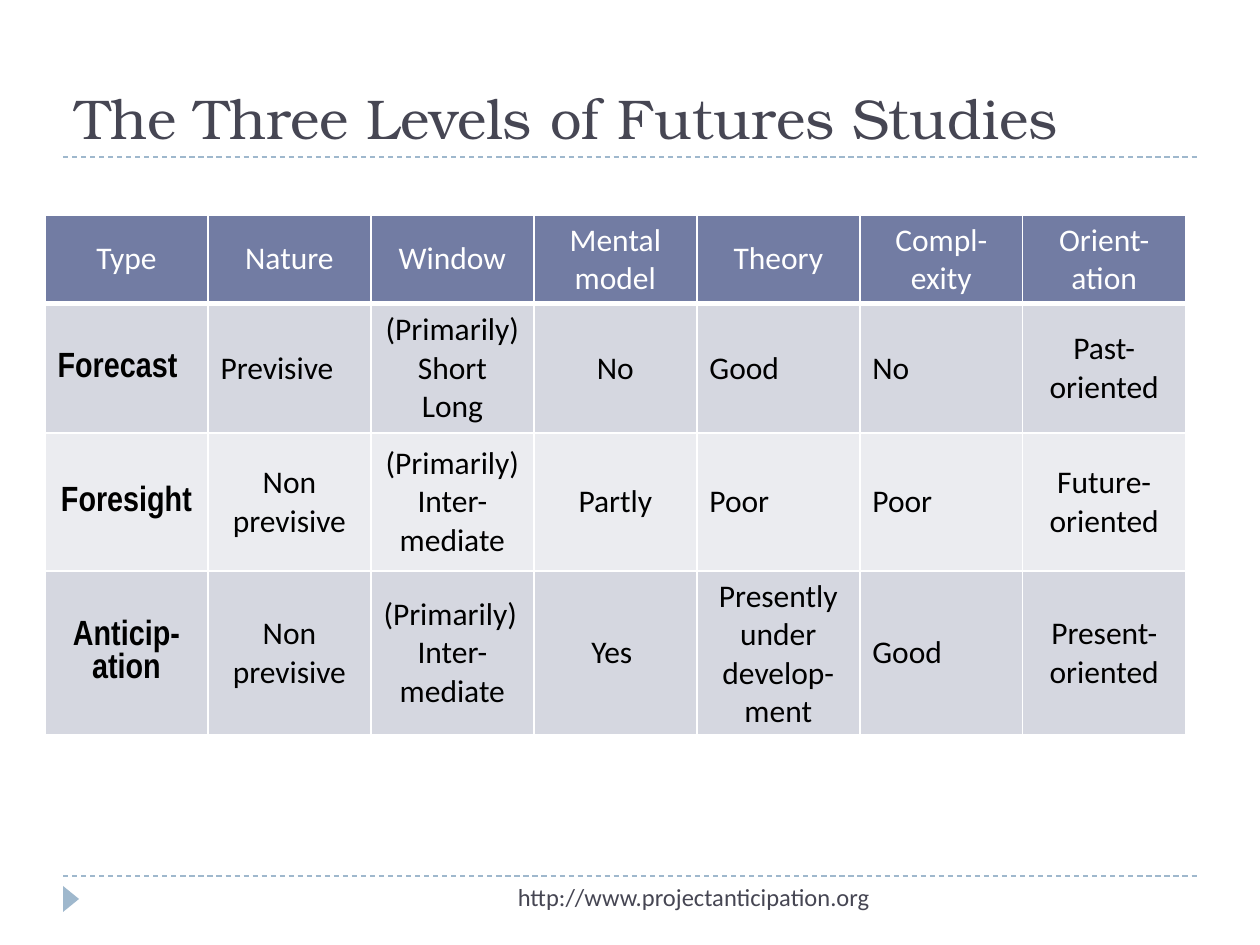
from lxml import etree
from pptx import Presentation
from pptx.dml.color import RGBColor
from pptx.enum.dml import MSO_LINE
from pptx.enum.shapes import MSO_CONNECTOR, MSO_SHAPE
from pptx.enum.text import MSO_ANCHOR, MSO_AUTO_SIZE, PP_ALIGN
from pptx.oxml.ns import qn
from pptx.util import Pt

LEFT, MID, RIGHT = PP_ALIGN.LEFT, PP_ALIGN.CENTER, PP_ALIGN.RIGHT
LOW, CENTER = MSO_ANCHOR.BOTTOM, MSO_ANCHOR.MIDDLE
DASH, STRAIGHT = MSO_LINE.DASH, MSO_CONNECTOR.STRAIGHT
FIXED, ARROW = MSO_AUTO_SIZE.NONE, MSO_SHAPE.ISOSCELES_TRIANGLE
TITLE_ONLY = 5

INK, ACCENT, WHITE, BLACK = "464653", "9FB8CD", "FFFFFF", "000000"
HEAD, BANDS = "727CA3", ("D5D7E0", "EBECF0")

# A leading "<" marks a paragraph set to the left
ROWS = [
    ["Type", "Nature", "Window", "Mental model", "Theory", "Compl-exity",
     "Orient-ation"],
    ["<Forecast", "<Previsive", "(Primarily) Short\nLong", "No", "<Good",
     "<No", "Past-oriented"],
    ["Foresight", "Non previsive", "(Primarily)\vInter-mediate", "Partly",
     "<Poor", "<Poor", "Future-oriented"],
    ["Anticip-ation", "Non previsive", "<(Primarily)\nInter-mediate", "Yes ",
     "Presently under develop-ment", "<Good", "Present-oriented"],
]
HEIGHTS = [77, 130, 138, 156]
COL = 163


def px(n):
    return round(n * 914400 / 126)


def color(code):
    return RGBColor.from_string(code)


def write(frame, text, size=18, font="Calibri", ink=BLACK, bold=False,
          align=LEFT):
    """Fill a text frame, one paragraph for each line of text."""
    frame.word_wrap = True
    for i, line in enumerate(text.split("\n")):
        para = frame.add_paragraph() if i else frame.paragraphs[0]
        para.text = line.removeprefix("<")
        para.alignment = LEFT if line.startswith("<") else align
        for run in para.runs:
            run.font.size = Pt(size)
            run.font.name = font
            run.font.bold = bold
            run.font.color.rgb = color(ink)


def edge(cell, base=1):
    """Draw white borders round a cell; base is the bottom width."""
    props = cell._tc.get_or_add_tcPr()
    for i, side in enumerate("LRTB"):
        width = Pt(base if side == "B" else 1)
        line = etree.Element(qn("a:ln" + side), w=str(width))
        fill = etree.SubElement(line, qn("a:solidFill"))
        etree.SubElement(fill, qn("a:srgbClr"), val=WHITE)
        props.insert(i, line)


class Deck:
    def __init__(self, wide, high):
        self.file = Presentation()
        self.file.slide_width, self.file.slide_height = px(wide), px(high)
        layout = self.file.slide_layouts[TITLE_ONLY]
        self.slide = self.file.slides.add_slide(layout)
        self.shapes = self.slide.shapes

    def title(self, text, x, y, w, h):
        box = self.shapes.title
        box.left, box.top, box.width, box.height = map(px, (x, y, w, h))
        frame = box.text_frame
        frame.auto_size, frame.vertical_anchor = FIXED, LOW
        write(frame, text, size=32, font="TeX Gyre Bonum", ink=INK)

    def label(self, text, x, y, w, h, **form):
        box = self.shapes.add_textbox(*map(px, (x, y, w, h)))
        write(box.text_frame, text, **form)

    def rule(self, x, y, end):
        line = self.shapes.add_connector(STRAIGHT, *map(px, (x, y, end, y)))
        line.line.color.rgb = color(ACCENT)
        line.line.width = Pt(0.75)
        line.line.dash_style = DASH
        etree.SubElement(line._element.spPr, qn("a:effectLst"))

    def arrow(self, x, y, w, h):
        mark = self.shapes.add_shape(ARROW, *map(px, (x, y, w, h)))
        mark.rotation = 90
        mark.shadow.inherit = False
        mark.fill.solid()
        mark.fill.fore_color.rgb = color(ACCENT)
        mark.line.fill.background()

    def table(self, x, y):
        count = len(ROWS[0])
        size = map(px, (x, y, COL * count, sum(HEIGHTS)))
        grid = self.shapes.add_table(len(ROWS), count, *size).table
        for col in grid.columns:
            col.width = px(COL)
        for r, texts in enumerate(ROWS):
            grid.rows[r].height = px(HEIGHTS[r])
            for c, text in enumerate(texts):
                cell = grid.cell(r, c)
                cell.vertical_anchor = CENTER
                cell.fill.solid()
                shade = BANDS[(r - 1) % 2] if r else HEAD
                cell.fill.fore_color.rgb = color(shade)
                edge(cell, base=1 if r else 3)
                form = {"align": MID, "ink": BLACK if r else WHITE}
                if r and c == 0:
                    form.update(size=20, font="Arial Narrow", bold=True)
                write(cell.text_frame, text, **form)


def main():
    deck = Deck(1260, 945)

    # Frame lines and corner arrow
    for y in (876, 157):
        deck.rule(63, y, 1197)
    deck.arrow(58, 891, 26, 16)

    # Title and footer
    deck.title("The Three Levels of Futures Studies", 63, 21, 1134, 136)
    deck.label("http://www.projectanticipation.org", 399, 876, 483, 50,
               size=14, ink=INK, align=RIGHT)

    # Comparison table
    deck.table(45, 215)

    deck.file.save("out.pptx")


if __name__ == "__main__":
    main()
